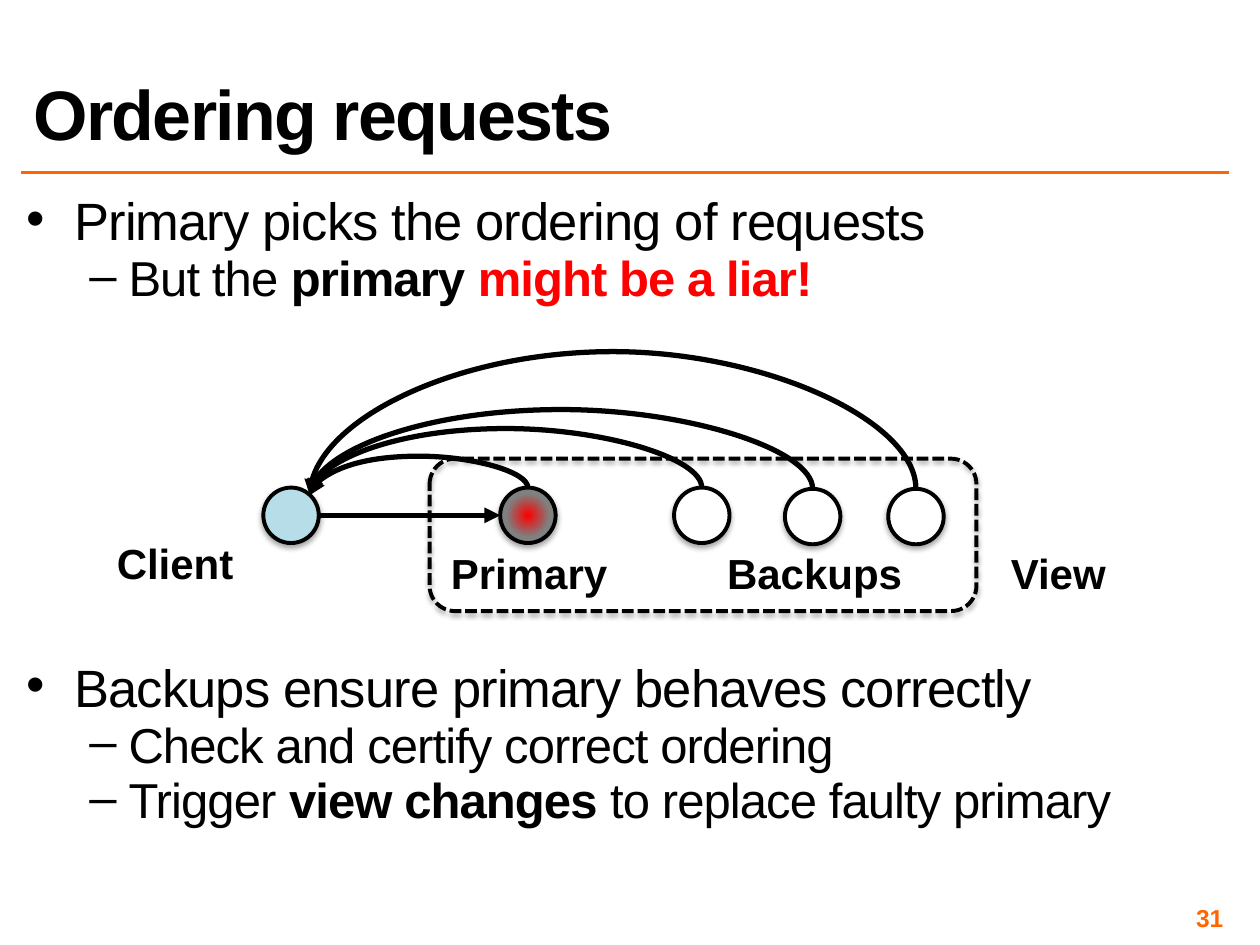
import pptx
import pptx.util
import pptx.oxml
import pptx.oxml.ns
import pptx.dml.color
import pptx.enum.dml
import pptx.enum.shapes
import pptx.enum.text

Inches, Pt = pptx.util.Inches, pptx.util.Pt
SHAPE = pptx.enum.shapes.MSO_SHAPE
CONNECTOR = pptx.enum.shapes.MSO_CONNECTOR
ALIGN = pptx.enum.text.PP_ALIGN
ANCHOR = pptx.enum.text.MSO_ANCHOR
A = "http://schemas.openxmlformats.org/drawingml/2006/main"

THEME = {
    "font": "Arial", "ink": "000000", "accent": "FF6600", "alert": "FF0000",
    "client": "B7DEE8", "backup": "FFFFFF", "faulty": "808080",
    "title": 40, "label": 24, "number": 14,
}

# Content: (level, space before, [(text, bold, colour), ...])
INK = THEME["ink"]
TITLE, PAGE = "Ordering requests", "31"
BULLETS = [
    (0, 14, [("Primary picks the ordering of requests", False, INK)]),
    (1, 8, [("But the ", False, INK), ("primary ", True, INK),
            ("might be a liar!", True, THEME["alert"])]),
    (0, 210, [("Backups ensure primary behaves correctly", False, INK)]),
    (1, 8, [("Check and certify correct ordering", False, INK)]),
    (1, 8, [("Trigger ", False, INK), ("view changes ", True, INK),
            ("to replace faulty primary", False, INK)]),
]
LEVELS = [
    {"size": 30, "margin": 0.38, "indent": -0.38, "mark": "•"},
    {"size": 28, "margin": 0.81, "indent": -0.31, "mark": "–"},
]
LABELS = [  # text, left, top, width
    ("Client", 0.82, 4.22, 1.14), ("View", 7.92, 4.3, 0.96),
    ("Primary", 3.47, 4.3, 1.46), ("Backups", 5.66, 4.3, 1.61),
]
NODE = 0.44
CLIENT = (2.09, 3.87)
REPLICAS = [  # left, top, height of the reply arc's control line
    (3.97, 3.87, 3.62), (5.35, 3.87, 3.4), (6.23, 3.88, 3.25), (7.05, 3.88, 2.79),
]
REPLY_END = (2.46, 3.93)
VIEW_BOX = (3.41, 3.64, 4.34, 1.21)

deck = pptx.Presentation()
deck.slide_width, deck.slide_height = Inches(10), Inches(7.5)
slide = deck.slides.add_slide(deck.slide_layouts[6])


def rgb(colour):
    return pptx.dml.color.RGBColor.from_string(colour)


def add_xml(parent, tag, **attributes):
    child = pptx.oxml.parse_xml(f'<a:{tag} xmlns:a="{A}"/>')
    for name, value in attributes.items():
        child.set(name, str(value))
    parent.append(child)
    return child


def apply(target, values):
    for name, value in values.items():
        setattr(target, name, value)


def text_frame(box, inset=None, **values):
    frame = slide.shapes.add_textbox(*map(Inches, box)).text_frame
    apply(frame, {"word_wrap": True, **values})
    if inset is not None:
        for side in ("left", "right", "top", "bottom"):
            setattr(frame, f"margin_{side}", Inches(inset))
    return frame


def add_run(paragraph, text, size, bold=True, colour=INK, spacing=0):
    run = paragraph.add_run()
    run.text = text
    apply(run.font, {"name": THEME["font"], "size": Pt(size), "bold": bold})
    run.font.color.rgb = rgb(colour)
    if spacing:
        run._r.get_or_add_rPr().set("spc", str(int(spacing * 100)))


def outline(part, width, colour=INK):
    part.line.color.rgb = rgb(colour)
    part.line.width = Pt(width)


def shadowed(kind, box):
    part = slide.shapes.add_shape(kind, *map(Inches, box))
    outline(part, 2.25)
    part.shadow.inherit = False
    effects = part._element.spPr.find(f"{{{A}}}effectLst")
    shadow = add_xml(effects, "outerShdw", blurRad=Pt(3.1), dist=Pt(1.8),
                     dir=5400000, rotWithShape=0)
    add_xml(add_xml(shadow, "srgbClr", val=INK), "alpha", val=35000)
    return part


def add_node(left, top, colour):
    node = shadowed(SHAPE.OVAL, (left, top, NODE, NODE))
    node.fill.solid()
    node.fill.fore_color.rgb = rgb(colour)
    return node


def add_line(kind, start, end, width, colour=INK, arrow=True):
    line = slide.shapes.add_connector(kind, *map(Inches, (*start, *end)))
    outline(line, width, colour)
    if arrow:
        add_xml(line.line._get_or_add_ln(), "tailEnd", type="triangle")
    add_xml(line._element.spPr, "effectLst")
    return line


def add_reply(start, end, peak):
    """Curve that leaves upward, bends at peak and drops to end."""
    across, along = end[1] - start[1], start[0] - end[0]
    left = (start[0] + end[0] - across) / 2
    top = (start[1] + end[1] - along) / 2
    curve = add_line(CONNECTOR.CURVE, (left, top),
                     (left + across, top + along), 3)
    properties = curve._element.spPr
    for name, value in {"rot": "16200000", "flipH": "1", "flipV": "1"}.items():
        properties.find(f"{{{A}}}xfrm").set(name, value)
    bend = round((peak - start[1]) / across * 100000)
    guides = properties.find(f"{{{A}}}prstGeom").get_or_add_avLst()
    add_xml(guides, "gd", name="adj1", fmla=f"val {bend}")


# Rule, body, page number and title
add_line(CONNECTOR.STRAIGHT, (0.17, 1.37), (9.75, 1.37), 2, THEME["accent"], False)

body = text_frame((0.17, 1.59, 9.58, 5.48), 0.04)
for index, (level, before, runs) in enumerate(BULLETS):
    paragraph = body.paragraphs[0] if index == 0 else body.add_paragraph()
    style = LEVELS[level]
    apply(paragraph, {"level": level, "line_spacing": 0.7, "space_before": Pt(before)})
    properties = paragraph._p.get_or_add_pPr()
    properties.set("marL", str(Inches(style["margin"])))
    properties.set("indent", str(Inches(style["indent"])))
    add_xml(properties, "buFont", typeface=THEME["font"])
    add_xml(properties, "buChar", char=style["mark"])
    for text, bold, colour in runs:
        add_run(paragraph, text, style["size"], bold, colour, -0.5)

number = text_frame((7.42, 7.17, 2.33, 0.23), 0.04, vertical_anchor=ANCHOR.MIDDLE)
number.paragraphs[0].alignment = ALIGN.RIGHT
add_run(number.paragraphs[0], PAGE, THEME["number"], colour=THEME["accent"])

title = text_frame((0.17, 0.1, 9.58, 1.17), vertical_anchor=ANCHOR.BOTTOM)
title.paragraphs[0].line_spacing = 0.8
add_run(title.paragraphs[0], TITLE, THEME["title"], spacing=-1)

# Client and replicas; the first replica is the suspect primary
add_node(*CLIENT, THEME["client"])
primary, *backups = [add_node(left, top, THEME["backup"]) for left, top, _ in REPLICAS]
primary.fill.gradient()
for stop, position, colour in zip(primary.fill.gradient_stops, (0, 0.55),
                                  (THEME["alert"], THEME["faulty"])):
    stop.position = position
    stop.color.rgb = rgb(colour)
gradient = primary._element.spPr.find(f"{{{A}}}gradFill")
gradient.remove(gradient.find(f"{{{A}}}lin"))
add_xml(add_xml(gradient, "path", path="circle"), "fillToRect",
        l=50000, t=50000, r=50000, b=50000)

# View boundary
view = shadowed(SHAPE.ROUNDED_RECTANGLE, VIEW_BOX)
view.fill.background()
view.line.dash_style = pptx.enum.dml.MSO_LINE.SQUARE_DOT

# Replies to the client, then its request to the primary
for left, top, peak in REPLICAS:
    add_reply((left + NODE / 2, top), REPLY_END, peak)
request_y = CLIENT[1] + NODE / 2
add_line(CONNECTOR.STRAIGHT, (CLIENT[0] + NODE, request_y),
         (REPLICAS[0][0], request_y), 3)

# Labels
for text, left, top, width in LABELS:
    label = text_frame((left, top, width, 0.5), word_wrap=False)
    label.paragraphs[0].alignment = ALIGN.CENTER
    add_run(label.paragraphs[0], text, THEME["label"])

deck.save("out.pptx")
